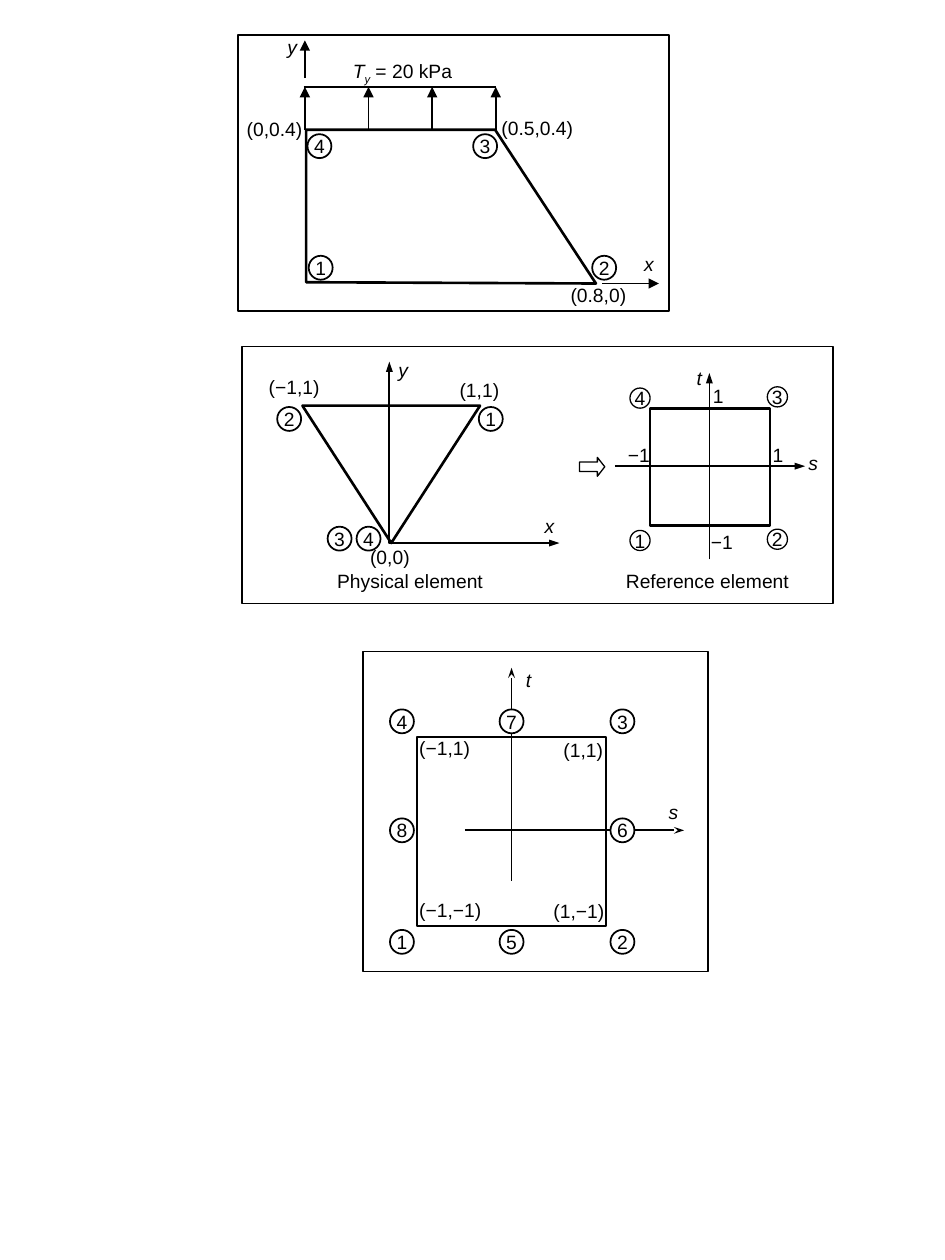
from dataclasses import dataclass

from lxml.etree import SubElement
from pptx import Presentation
from pptx.dml.color import RGBColor
from pptx.enum.shapes import MSO_CONNECTOR as Connector, MSO_SHAPE as Shape
from pptx.enum.text import MSO_ANCHOR as Anchor, PP_ALIGN as Align
from pptx.oxml.ns import qn
from pptx.util import Inches, Pt


@dataclass(frozen=True)
class Theme:
    """Colours, type and line weights."""
    ink: RGBColor = RGBColor(0, 0, 0)
    paper: RGBColor = RGBColor(255, 255, 255)
    font: str = "Arial"
    size: float = 11
    thin: float = 0.75
    line: float = 1
    bold: float = 1.5


THEME = Theme()
COLS, ROWS = 75, 100
CELL = Inches(7.5) // COLS
NODE, SMALL_NODE = 1.9, 1.6
LABEL_PAD = 0.5


def grid(*lengths):
    """Turn grid cells into slide lengths."""
    return [round(n * CELL) for n in lengths]


def style_line(sp, width):
    """Give a shape an ink line of the given weight."""
    sp.line.color.rgb = THEME.ink
    sp.line.width = Pt(width)


def style_text(sp, text, italic=False, anchor=Anchor.TOP):
    """Set centred text without margins and return its paragraph."""
    tf = sp.text_frame
    tf.text = text
    tf.word_wrap = False
    tf.vertical_anchor = anchor
    tf.margin_left = tf.margin_right = tf.margin_top = tf.margin_bottom = 0
    p = tf.paragraphs[0]
    p.alignment = Align.CENTER
    for r in p.runs:
        style_run(r, italic)
    return p


def style_run(r, italic=False):
    """Apply the theme type to a run."""
    r.font.name, r.font.size = THEME.font, Pt(THEME.size)
    r.font.color.rgb, r.font.italic = THEME.ink, italic


def add_ends(sp, kind, width="med", both=False):
    """Put an arrowhead at the end, or both ends, of a line."""
    ln = sp._element.spPr.find(qn("a:ln"))
    for tag in ("a:headEnd", "a:tailEnd") if both else ("a:tailEnd",):
        SubElement(ln, qn(tag), type=kind, w=width, len="med")


def add_outline(g, kind, x, y, w, h, width=THEME.line, filled=False):
    """Add a preset shape with an ink line."""
    sp = g.shapes.add_shape(kind, *grid(x, y, w, h))
    sp.shadow.inherit = False
    if filled:
        sp.fill.solid()
        sp.fill.fore_color.rgb = THEME.paper
    else:
        sp.fill.background()
    style_line(sp, width)
    return sp


def add_node(g, number, x, y, size=NODE, width=THEME.line, filled=False):
    """Add a numbered circle centred on a point."""
    sp = add_outline(g, Shape.OVAL, x - size / 2, y - size / 2, size, size, width, filled)
    style_text(sp, str(number), anchor=Anchor.MIDDLE)


def add_label(g, text, x, y, w, h=1.9, italic=False):
    """Add a label centred on its span, with room to spare, and return its paragraph."""
    box = grid(x - LABEL_PAD, y, w + 2 * LABEL_PAD, h)
    return style_text(g.shapes.add_textbox(*box), text, italic)


def add_line(g, x1, y1, x2, y2, head=None, head_width="med"):
    """Add a straight line, with an arrowhead if one is named."""
    sp = g.shapes.add_connector(Connector.STRAIGHT, *grid(x1, y1, x2, y2))
    style_line(sp, THEME.line)
    SubElement(sp._element.spPr, qn("a:effectLst"))
    if head:
        add_ends(sp, head, head_width)


def add_path(g, points, width, close=True):
    """Add an unfilled outline through the points."""
    start, *others = [grid(*point) for point in points]
    builder = g.shapes.build_freeform(*start)
    builder.add_line_segments(others, close=close)
    sp = builder.convert_to_shape()
    sp.shadow.inherit = False
    sp.fill.background()
    style_line(sp, width)
    return sp


def draw_loaded_element(g):
    """Draw the quadrilateral under a uniform traction."""
    add_outline(g, Shape.RECTANGLE, 18.9, 2.8, 34.2, 21.9)
    add_path(g, [(24.3, 22.4), (24.3, 10.3), (39.3, 10.3), (47.3, 22.5)], THEME.bold)
    for i in range(4):
        x = 24.2 + i * 5.05
        add_line(g, x, 10.3, x, 6.9, "triangle")
    add_line(g, 24.1, 6.9, 39.4, 6.9)
    add_line(g, 47.8, 22.5, 52.3, 22.5, "triangle")
    add_line(g, 24.2, 6.2, 24.2, 3.2, "triangle")
    for text, x, y, w in (("(0.8,0)", 45.3, 22.5, 4.4), ("(0.5,0.4)", 39.8, 9.2, 5.7),
                          ("(0,0.4)", 19.6, 9.3, 4.4)):
        add_label(g, text, x, y, w)
    add_label(g, "y", 22.8, 2.8, 0.8, italic=True)
    add_label(g, "x", 51.1, 20, 0.8, italic=True)
    p = add_label(g, "T", 27.8, 4.7, 8.3, italic=True)
    for text, italic in (("y", True), (" = 20 kPa", False)):
        r = p.add_run()
        r.text = text
        style_run(r, italic)
    p.runs[1].font._element.set("baseline", "-25000")
    for number, x, y in ((1, 25.45, 21.25), (2, 47.95, 21.25), (3, 38.5, 11.6), (4, 25.35, 11.6)):
        add_node(g, number, x, y)


def draw_physical_element(g):
    """Draw the triangle made by merging two nodes."""
    triangle = add_outline(g, Shape.ISOSCELES_TRIANGLE, 24, 32.2, 14.1, 10.9, THEME.bold, True)
    triangle.rotation = 180
    axes = add_path(g, [(30.9, 28.7), (30.9, 43.1), (44.4, 43.1)], THEME.line, close=False)
    add_ends(axes, "triangle", "sm", both=True)
    for number, x, y in ((1, 38.95, 33.25), (2, 22.95, 33.25), (3, 26.95, 42.75), (4, 29.25, 42.75)):
        add_node(g, number, x, y)
    for text, x, y, w in (("(−1,1)", 21.1, 29.8, 4.5), ("(0,0)", 29.1, 43.3, 3.7),
                          ("(1,1)", 35.8, 30, 4.5), ("Physical element", 25.3, 45.2, 14.5)):
        add_label(g, text, x, y, w)
    add_label(g, "x", 43.2, 40.8, 0.8, italic=True)
    add_label(g, "y", 31.6, 28.4, 0.8, italic=True)


def draw_reference_element(g):
    """Draw the four-node square in s and t."""
    left, top, side, height = 51.6, 32.4, 9.5, 9.3
    right, bottom = left + side, top + height
    add_line(g, 48.8, 37, 63.9, 37, "triangle", "sm")
    add_line(g, 56.3, 44.4, 56.3, 29.6, "triangle", "sm")
    add_path(g, [(left, bottom), (left, top), (right, top), (right, bottom)], THEME.bold)
    for text, x, y, w in (("−1", 56.3, 42.1, 2), ("−1", 49.7, 35.2, 2), ("1", 61, 35.2, 1.5),
                          ("1", 56.2, 30.5, 1.6), ("Reference element", 48.9, 45.2, 14.5)):
        add_label(g, text, x, y, w)
    add_label(g, "s", 63.8, 35.8, 1.5, italic=True)
    add_label(g, "t", 54.7, 29.1, 1.6, italic=True)
    for number, x, y in ((1, 50.8, 42.9), (2, 61.7, 42.8), (3, 61.7, 31.5), (4, 50.8, 31.6)):
        add_node(g, number, x, y, SMALL_NODE, THEME.thin)


def draw_mapping(g):
    """Draw the physical and reference elements side by side."""
    add_outline(g, Shape.RECTANGLE, 19.2, 27.5, 46.9, 20.4)
    draw_physical_element(g)
    arrow = add_outline(g, Shape.RIGHT_ARROW, 46, 36.3, 2, 1.5, THEME.thin, True)
    arrow.adjustments[1] = 0.39
    draw_reference_element(g)


def draw_eight_node_element(g):
    """Draw the square with corner and midside nodes."""
    add_outline(g, Shape.RECTANGLE, 28.8, 51.7, 27.4, 25.4)
    add_outline(g, Shape.RECTANGLE, 33.1, 58.5, 15, 15, THEME.bold)
    add_line(g, 36.9, 65.9, 54.3, 65.9, "stealth", "sm")
    add_line(g, 40.6, 69.9, 40.6, 53, "stealth", "sm")
    for text, x, y, w in (("(−1,1)", 33.1, 58.4, 4.4), ("(−1,−1)", 33.1, 71.3, 5.3),
                          ("(1,−1)", 43.8, 71.4, 4.3), ("(1,1)", 44.5, 58.6, 3.6)):
        add_label(g, text, x, y, w)
    add_label(g, "s", 52.5, 63.5, 1.9, italic=True)
    add_label(g, "t", 41, 53, 1.9, italic=True)
    left, middle, right = 31.9, 40.6, 49.4
    top, centre, bottom = 57.25, 65.9, 74.75
    spots = ((left, bottom), (right, bottom), (right, top), (left, top),
             (middle, bottom), (right, centre), (middle, top), (left, centre))
    for number, (x, y) in enumerate(spots, 1):
        add_node(g, number, x, y, filled=True)


def main():
    """Build the slide of three element diagrams."""
    prs = Presentation()
    prs.slide_width, prs.slide_height = grid(COLS, ROWS)
    s = prs.slides.add_slide(prs.slide_layouts[6])
    for draw in (draw_loaded_element, draw_mapping, draw_eight_node_element):
        draw(s.shapes.add_group_shape())
    prs.save("out.pptx")


if __name__ == "__main__":
    main()
